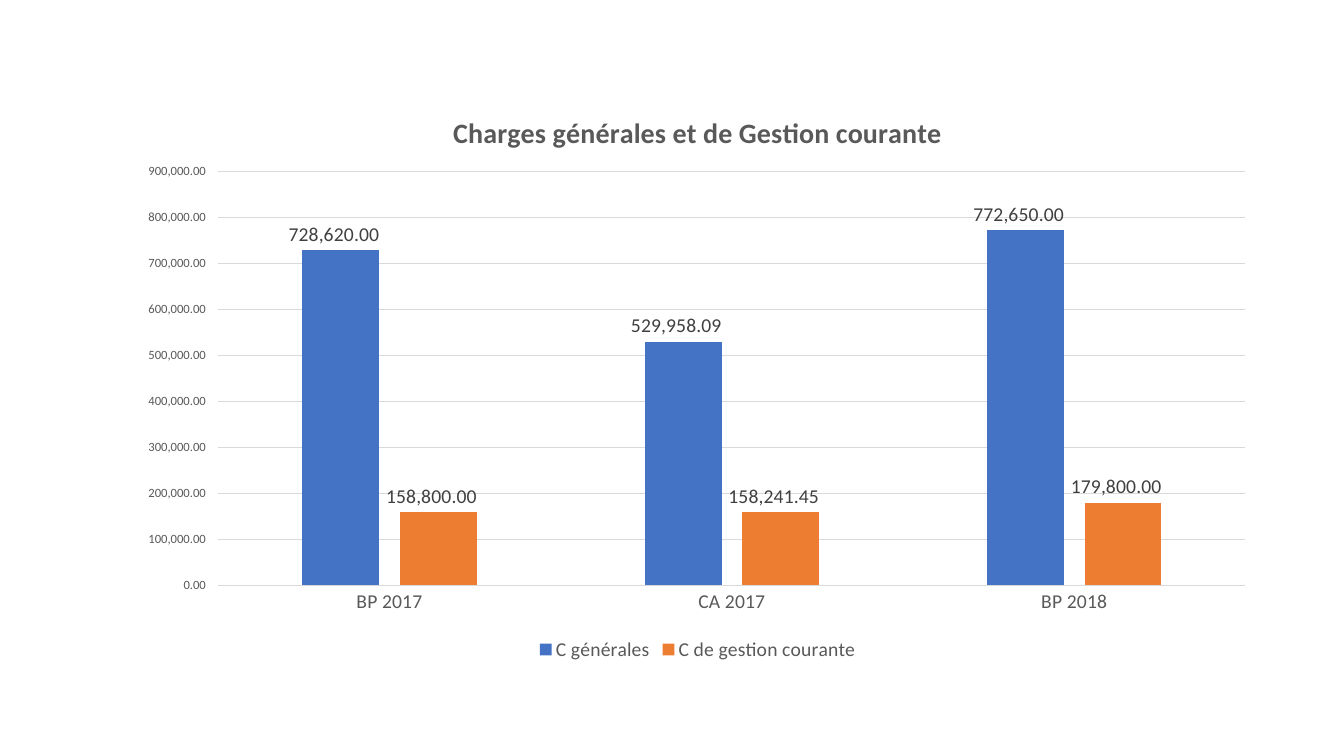
from dataclasses import dataclass

from lxml import etree
from pptx import Presentation
from pptx.chart.chart import Chart
from pptx.chart.data import CategoryChartData
from pptx.dml.color import RGBColor
from pptx.enum.chart import (XL_CHART_TYPE, XL_LABEL_POSITION,
                             XL_LEGEND_POSITION, XL_TICK_MARK)
from pptx.oxml.ns import qn
from pptx.text.text import Font
from pptx.util import Pt

COLUMNS = XL_CHART_TYPE.COLUMN_CLUSTERED
OUTSIDE_END = XL_LABEL_POSITION.OUTSIDE_END
LEGEND_BOTTOM = XL_LEGEND_POSITION.BOTTOM
NO_TICK = XL_TICK_MARK.NONE

EMU_PER_PX = 9525
FONT_NAME = "Calibri"
EURO_FORMAT = "#,##0.00\\ _€"

BLUE = RGBColor(0x44, 0x72, 0xC4)
ORANGE = RGBColor(0xED, 0x7D, 0x31)
GREY = RGBColor(0x59, 0x59, 0x59)
DARK_GREY = RGBColor(0x40, 0x40, 0x40)
LIGHT_GREY = RGBColor(0xD9, 0xD9, 0xD9)


@dataclass(frozen=True)
class Charge:
    name: str
    amounts: tuple[float, ...]
    color: RGBColor


BUDGETS = ("BP 2017", "CA 2017", "BP 2018")
CHARGES = (
    Charge("C générales", (728620, 529958.09, 772650), BLUE),
    Charge("C de gestion courante", (158800, 158241.45, 179800), ORANGE),
)
PLOT_AREA = {"x": 0.08, "y": 0.14, "w": 0.9, "h": 0.72}


def px(length: int) -> int:
    return length * EMU_PER_PX


def format_font(font: Font, *, size: int, color: RGBColor = GREY,
                bold: bool = False) -> None:
    font.name = FONT_NAME
    font.size = Pt(size)
    font.bold = bold
    font.color.rgb = color


def write_title(chart: Chart, text: str, *, size: int, bold: bool) -> None:
    chart.has_title = True
    chart.chart_title.include_in_layout = False
    paragraph = chart.chart_title.text_frame.paragraphs[0]
    run = paragraph.add_run()
    run.text = text
    format_font(run.font, size=size, bold=bold)


def place_plot_area(chart: Chart, fractions: dict[str, float]) -> None:
    plot_area = chart._chartSpace.find(".//" + qn("c:plotArea"))
    for old_layout in plot_area.findall(qn("c:layout")):
        plot_area.remove(old_layout)
    layout = etree.Element(qn("c:layout"))
    manual = etree.SubElement(layout, qn("c:manualLayout"))
    settings = {"layoutTarget": "inner", "xMode": "edge", "yMode": "edge", **fractions}
    for tag, value in settings.items():
        etree.SubElement(manual, qn(f"c:{tag}")).set("val", str(value))
    plot_area.insert(0, layout)


def format_axes(chart: Chart) -> None:
    budgets, amounts = chart.category_axis, chart.value_axis
    for axis, size in ((budgets, 14), (amounts, 9)):
        axis.major_tick_mark = NO_TICK
        axis.minor_tick_mark = NO_TICK
        format_font(axis.tick_labels.font, size=size)
    amounts.minimum_scale, amounts.maximum_scale = 0, 900000
    amounts.major_unit = 100000
    amounts.tick_labels.number_format = EURO_FORMAT
    amounts.tick_labels.number_format_is_linked = False
    amounts.format.line.fill.background()
    for line in (budgets.format.line, amounts.major_gridlines.format.line):
        line.color.rgb = LIGHT_GREY
        line.width = Pt(0.75)


def format_columns(chart: Chart) -> None:
    plot = chart.plots[0]
    plot.gap_width = 219
    plot.overlap = -27
    plot.vary_by_categories = False
    for charge, series in zip(CHARGES, plot.series):
        series.format.fill.solid()
        series.format.fill.fore_color.rgb = charge.color
        series.invert_if_negative = False
        labels = series.data_labels
        labels.show_value = True
        labels.position = OUTSIDE_END
        labels.number_format = EURO_FORMAT
        labels.number_format_is_linked = False
        format_font(labels.font, size=14, color=DARK_GREY)


def main() -> None:
    prs = Presentation()
    prs.slide_width, prs.slide_height = px(1280), px(720)
    slide = prs.slides.add_slide(prs.slide_layouts.get_by_name("Blank"))

    # Amounts by budget
    data = CategoryChartData(number_format=EURO_FORMAT)
    data.categories = BUDGETS
    for charge in CHARGES:
        data.add_series(charge.name, charge.amounts)
    chart = slide.shapes.add_chart(
        COLUMNS, px(121), px(87), px(1087), px(547), data).chart
    chart.font.name = FONT_NAME
    chart.font.size = Pt(10)

    # Title, plot and axes
    write_title(chart, "Charges générales et de Gestion courante", size=20, bold=True)
    place_plot_area(chart, PLOT_AREA)
    format_axes(chart)
    format_columns(chart)

    # Legend
    chart.has_legend = True
    chart.legend.position = LEGEND_BOTTOM
    chart.legend.include_in_layout = False
    format_font(chart.legend.font, size=14)

    prs.save("out.pptx")


if __name__ == "__main__":
    main()
